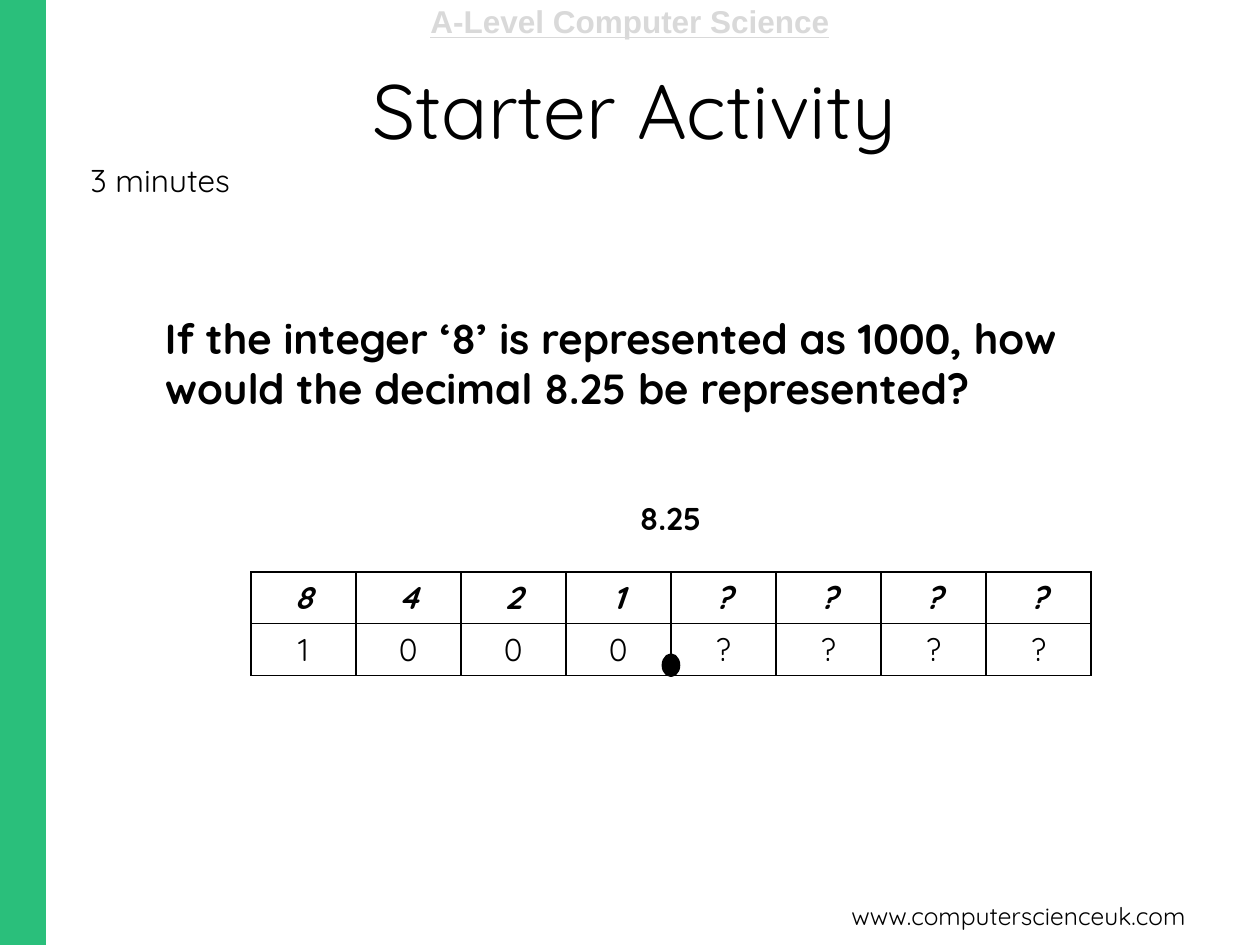
from dataclasses import dataclass

from lxml.etree import SubElement
from pptx import Presentation
from pptx.dml.color import RGBColor
from pptx.enum.shapes import MSO_SHAPE
from pptx.enum.text import MSO_ANCHOR, MSO_AUTO_SIZE, PP_ALIGN
from pptx.oxml.ns import qn
from pptx.util import Inches, Pt


@dataclass(frozen=True)
class Theme:
    accent: str = "2ABF7B"
    ink: str = "000000"
    faint: str = "D9D9D9"
    font: str = "Quicksand"
    header_font: str = "Arial"
    title: int = 44
    question: int = 24
    body: int = 18
    footer: int = 14


THEME = Theme()
WIDTH, HEIGHT = 10, 7.5
PLACE_VALUES = [list("8421????"), list("1000????")]
TABLE_LEFT, TABLE_TOP, TABLE_WIDTH, ROW_HEIGHT = 1.99, 4.54, 6.67, 0.41


def box(*lengths):
    return [Inches(n) for n in lengths]


def write(tf, text, size, align=PP_ALIGN.LEFT, color=THEME.ink, **formats):
    """Put one formatted run into a text frame."""
    p = tf.paragraphs[0]
    p.alignment = align
    r = p.add_run()
    r.text = text
    r.font.color.rgb = RGBColor.from_string(color)
    values = {"name": THEME.font, "size": Pt(size), **formats}
    for name, value in values.items():
        setattr(r.font, name, value)


def add_text(s, at, text, size, wrap=True, **formats):
    tf = s.shapes.add_textbox(*box(*at)).text_frame
    tf.word_wrap = wrap
    tf.auto_size = MSO_AUTO_SIZE.SHAPE_TO_FIT_TEXT
    write(tf, text, size, **formats)


def add_solid(s, kind, at, color):
    sp = s.shapes.add_shape(kind, *box(*at))
    sp.shadow.inherit = False
    sp.fill.solid()
    sp.fill.fore_color.rgb = RGBColor.from_string(color)
    sp.line.color.rgb = RGBColor.from_string(color)
    sp.line.width = Pt(2)


def set_title(s, at, text):
    title = s.shapes.title
    title.left, title.top, title.width, title.height = box(*at)
    title.text_frame.vertical_anchor = MSO_ANCHOR.MIDDLE
    write(title.text_frame, text, THEME.title, PP_ALIGN.CENTER)


def add_borders(cell):
    tc_pr = cell._tc.get_or_add_tcPr()
    for side in ("a:lnL", "a:lnR", "a:lnT", "a:lnB"):
        ln = SubElement(tc_pr, qn(side), w=str(Pt(1)))
        fill = SubElement(ln, qn("a:solidFill"))
        SubElement(fill, qn("a:srgbClr"), val=THEME.ink)


def add_grid(s, rows):
    """Place values above, binary digits below."""
    n_rows, n_cols = len(rows), len(rows[0])
    at = box(TABLE_LEFT, TABLE_TOP, TABLE_WIDTH, n_rows * ROW_HEIGHT)
    table = s.shapes.add_table(n_rows, n_cols, *at).table
    table.first_row = table.horz_banding = False
    for col in table.columns:
        col.width = Inches(TABLE_WIDTH / n_cols)
    for i, row in enumerate(rows):
        table.rows[i].height = Inches(ROW_HEIGHT)
        for j, text in enumerate(row):
            cell = table.cell(i, j)
            add_borders(cell)
            cell.fill.background()
            write(cell.text_frame, text, THEME.body, PP_ALIGN.CENTER,
                  bold=i == 0, italic=i == 0)


def main():
    prs = Presentation()
    prs.slide_width, prs.slide_height = box(WIDTH, HEIGHT)
    s = prs.slides.add_slide(prs.slide_layouts.get_by_name("Title Only"))

    # Side band, course name and web address
    add_solid(s, MSO_SHAPE.RECTANGLE, (0, 0, 0.35, HEIGHT), THEME.accent)
    add_text(s, (1.34, -0.03, 7.32, 0.4), "A-Level Computer Science",
             THEME.body, align=PP_ALIGN.CENTER, color=THEME.faint,
             name=THEME.header_font, bold=True, underline=True)
    add_text(s, (6.66, 7.1, 3.14, 0.34), "www.computerscienceuk.com",
             THEME.footer, wrap=False)

    # Title, time limit and question
    set_title(s, (0.62, 0.39, 9, 0.94), "Starter Activity ")
    add_text(s, (0.62, 1.23, 1.36, 0.4), "3 minutes", THEME.body, wrap=False)
    add_text(s, (1.21, 2.43, 8.11, 0.91),
             "If the integer ‘8’ is represented as 1000, "
             "how would the decimal 8.25 be represented?",
             THEME.question, bold=True)

    # Number, place-value table and its binary point
    add_text(s, (4.98, 3.91, 0.7, 0.4), "8.25", THEME.body, wrap=False,
             bold=True)
    add_grid(s, PLACE_VALUES)
    point_width, point_height = 0.12, 0.16
    point_left = TABLE_LEFT + (TABLE_WIDTH - point_width) / 2
    add_solid(s, MSO_SHAPE.OVAL, (point_left, 5.2, point_width, point_height),
              THEME.ink)

    prs.save("out.pptx")


if __name__ == "__main__":
    main()
